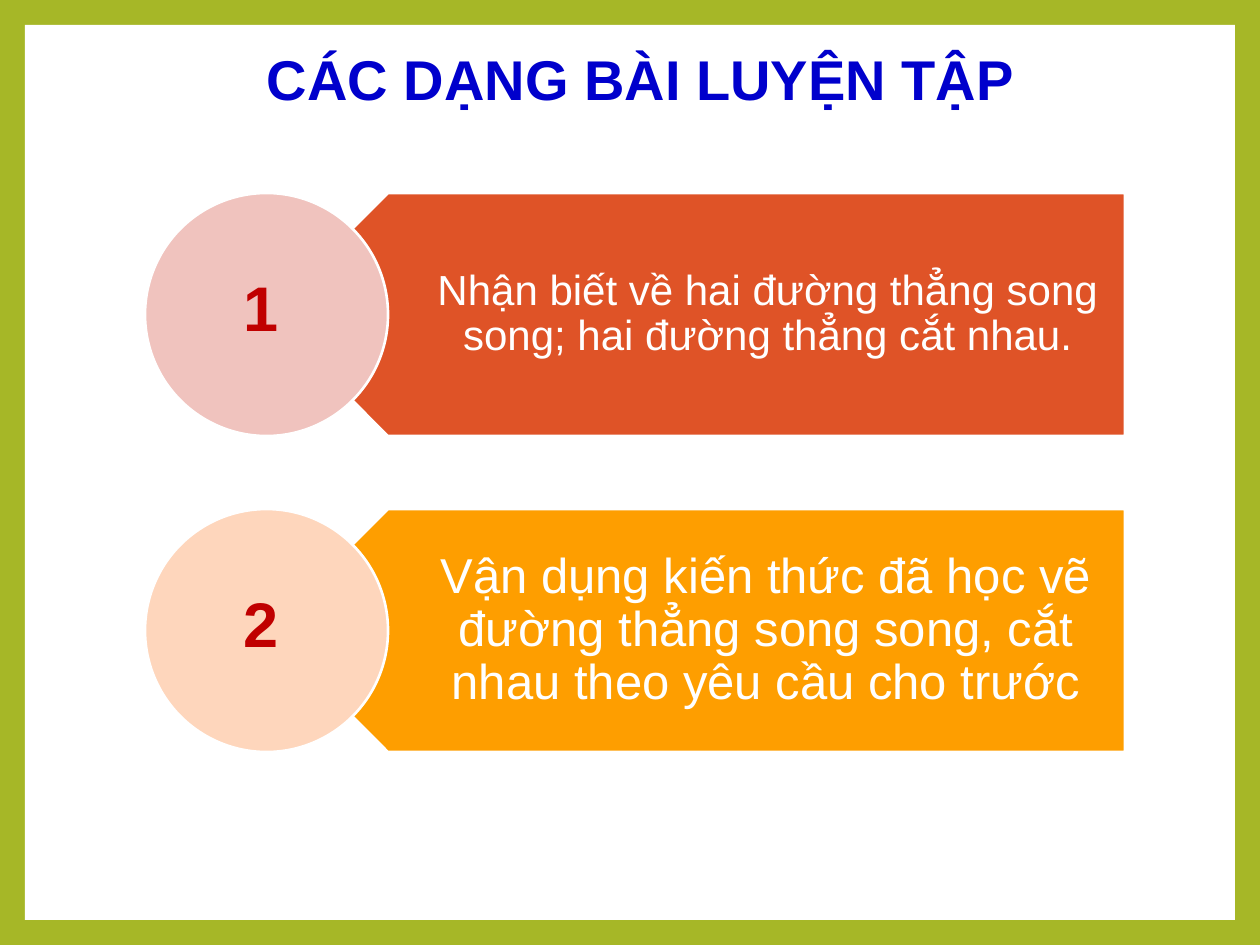
"""Build the slide listing the two kinds of practice exercise."""
from pptx import Presentation
from pptx.dml.color import RGBColor
from pptx.enum.shapes import MSO_SHAPE
from pptx.enum.text import MSO_ANCHOR, MSO_AUTO_SIZE, PP_ALIGN
from pptx.util import Emu, Pt

RECT, OVAL = MSO_SHAPE.RECTANGLE, MSO_SHAPE.OVAL
CENTER, LEFT = PP_ALIGN.CENTER, PP_ALIGN.LEFT
MIDDLE, TOP = MSO_ANCHOR.MIDDLE, MSO_ANCHOR.TOP
NO_FIT = MSO_AUTO_SIZE.NONE

COLORS = {
    "frame": "A6B727", "white": "FFFFFF", "title": "0000CC", "number": "C00000",
    "red": "DF5327", "pink": "F0C3BE", "orange": "FE9E00", "peach": "FED6BC",
}
TITLE = "CÁC DẠNG BÀI LUYỆN TẬP "
EXERCISES = [
    ("1", "Nhận biết về hai đường thẳng song song; hai đường thẳng cắt nhau.",
     24, "red", "pink", (168, 13, 24, 13)),
    ("2", "Vận dụng kiến thức đã học vẽ đường thẳng song song, cắt nhau theo yêu cầu cho trước",
     28, "orange", "peach", (168, 15, 28, 15)),
]
ROW_TOP, ROW_STEP, SIZE = 193, 316, 243
CIRCLE_LEFT, BANNER_RIGHT = 145, 1125
SCALE = 914400 / 126


def px(n):
    return Emu(round(n * SCALE))


def box(*lengths):
    return [px(n) for n in lengths]


def color(name):
    return RGBColor.from_string(COLORS[name])


def paint(sp, fill, line=None):
    sp.shadow.inherit = False
    sp.fill.solid()
    sp.fill.fore_color.rgb = color(fill)
    if line:
        sp.line.color.rgb = color(line)
        sp.line.width = Pt(1.5)
    else:
        sp.line.fill.background()


def write(sp, text, size, ink, align=CENTER, anchor=TOP, bold=False, wrap=True):
    tf = sp.text_frame
    tf.text = text
    tf.word_wrap = wrap
    tf.auto_size = NO_FIT
    tf.vertical_anchor = anchor
    p = tf.paragraphs[0]
    p.alignment = align
    p.font.name = "Arial"
    p.font.size = Pt(size)
    p.font.bold = bold
    p.font.color.rgb = color(ink)
    return tf


def add_banner(s, top, text, size, fill, insets):
    tip, shoulder = CIRCLE_LEFT + SIZE / 2, CIRCLE_LEFT + SIZE
    bottom = top + SIZE
    fb = s.shapes.build_freeform(px(BANNER_RIGHT), px(bottom))
    fb.add_line_segments([box(*point) for point in (
        (shoulder, bottom), (tip, top + SIZE / 2),
        (shoulder, top), (BANNER_RIGHT, top))], close=True)
    sp = fb.convert_to_shape()
    paint(sp, fill, "white")
    tf = write(sp, text, size, "white", anchor=MIDDLE)
    tf.margin_left, tf.margin_top, tf.margin_right, tf.margin_bottom = box(*insets)
    tf.paragraphs[0].line_spacing = 0.9


def add_badge(s, top, number, fill):
    group = s.shapes.add_group_shape()
    circle = group.shapes.add_shape(OVAL, *box(CIRCLE_LEFT, top, SIZE, SIZE))
    paint(circle, fill, "white")
    label = group.shapes.add_textbox(*box(CIRCLE_LEFT + 86, top + 69, 84, 89))
    write(label, number, 36, "number", align=LEFT, bold=True)


def main():
    prs = Presentation()
    prs.slide_width, prs.slide_height = box(1260, 945)
    s = prs.slides.add_slide(prs.slide_layouts[5])
    s.background.fill.solid()
    s.background.fill.fore_color.rgb = color("frame")

    title = s.shapes.title
    title.left, title.top, title.width, title.height = box(251, 38, 794, 81)
    write(title, TITLE, 32, "title", anchor=TOP, bold=True, wrap=False)

    panel = s.shapes.add_shape(RECT, *box(25, 25, 1210, 895))
    paint(panel, "white")
    title._element.addprevious(panel._element)

    for i, (number, text, size, fill, tint, insets) in enumerate(EXERCISES):
        top = ROW_TOP + i * ROW_STEP
        add_banner(s, top, text, size, fill, insets)
        add_badge(s, top, number, tint)
    prs.save("out.pptx")


if __name__ == "__main__":
    main()
